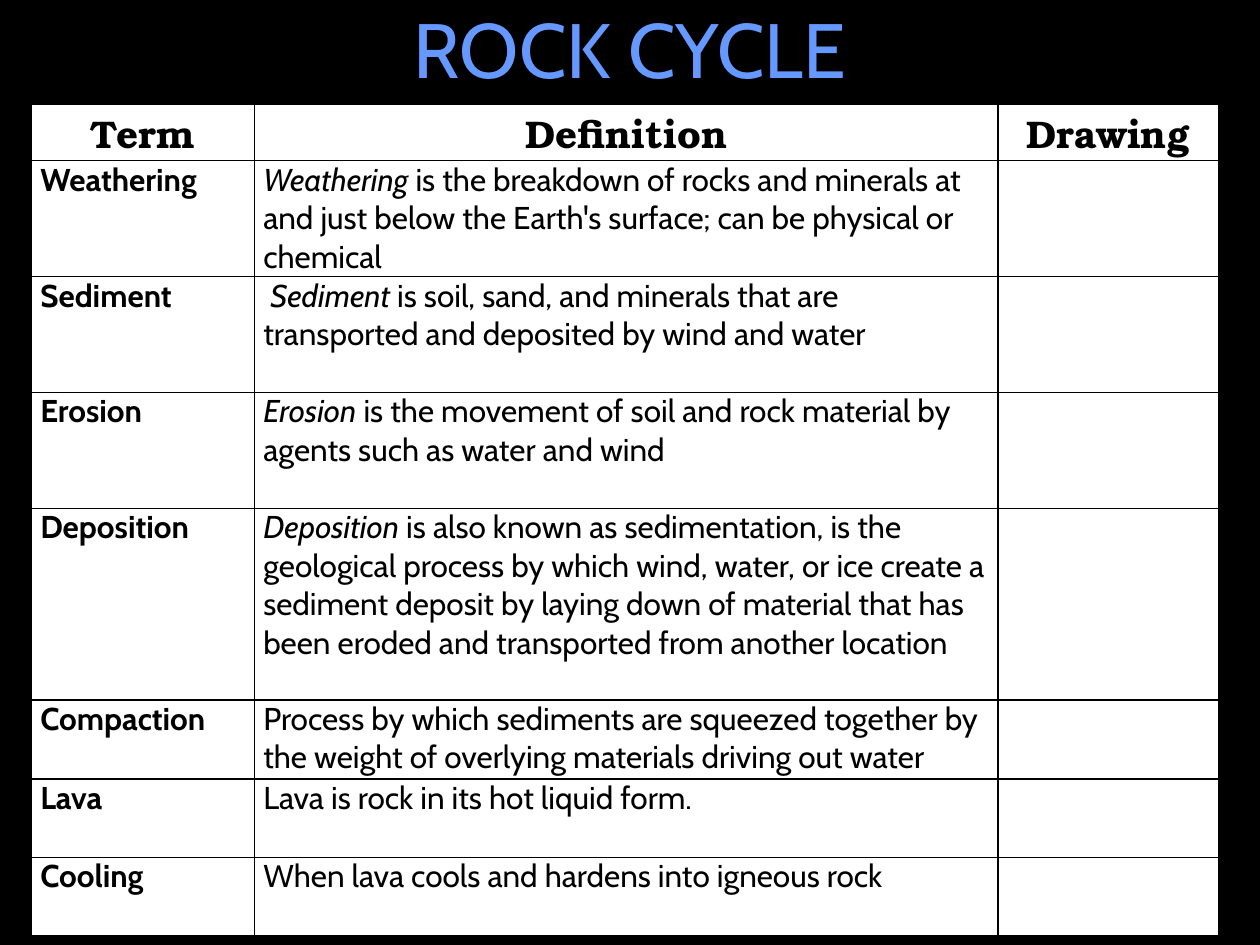
from pptx import Presentation
from pptx import util as u
from pptx.dml.color import RGBColor
from pptx.enum import text
from pptx.oxml import parse_xml
from pptx.oxml.ns import nsdecls

BLACK = RGBColor(0x00, 0x00, 0x00)
WHITE = RGBColor(0xFF, 0xFF, 0xFF)
BLUE = RGBColor(0x66, 0x99, 0xFF)

BODY_FONT = "Cabin"
HEADER_FONT = "TeX Gyre Bonum"

HEADERS = ("Term", "Definition", "Drawing")
COLUMN_WIDTHS = (1.77, 5.9, 1.75)
HEADER_HEIGHT = 0.44

# Term, italic opening of the definition, rest of the definition, row height
GLOSSARY = (
    ("Weathering", "Weathering",
     " is the breakdown of rocks and minerals at and just below the Earth's "
     "surface; can be physical or chemical", 0.92),
    ("Sediment", " Sediment",
     " is soil, sand, and minerals that are transported and deposited by "
     "wind and water", 0.92),
    ("Erosion", "Erosion",
     " is the movement of soil and rock material by agents such as water "
     "and wind", 0.92),
    ("Deposition", "Deposition",
     " is also known as sedimentation, is the geological process by which "
     "wind, water, or ice create a sediment deposit by laying down of "
     "material that has been eroded and transported from another location",
     1.52),
    ("Compaction", "",
     "Process by which sediments are squeezed together by the weight of "
     "overlying materials driving out water", 0.63),
    ("Lava", "", "Lava is rock in its hot liquid form.", 0.62),
    ("Cooling", "", "When lava cools and hardens into igneous rock", 0.62),
)


class SlideBuilder:
    """Holds the current slide and the style of its elements."""

    def __init__(self, slide):
        self.slide = slide
        slide.background.fill.solid()
        slide.background.fill.fore_color.rgb = BLACK

    def style(self, paragraph, size, color, font=BODY_FONT, bold=False,
              align=text.PP_ALIGN.LEFT):
        paragraph.alignment = align
        paragraph.font.name = font
        paragraph.font.size = u.Pt(size)
        paragraph.font.bold = bold
        paragraph.font.color.rgb = color

    def title(self, wording, left, top, width, height):
        heading = self.slide.shapes.title
        heading.left, heading.top = u.Inches(left), u.Inches(top)
        heading.width, heading.height = u.Inches(width), u.Inches(height)
        heading.text_frame.text = wording
        heading.text_frame.vertical_anchor = text.MSO_ANCHOR.MIDDLE
        self.style(heading.text_frame.paragraphs[0], 44, BLUE,
                   align=text.PP_ALIGN.CENTER)

    def table(self, left, top, widths, heights):
        grid = self.slide.shapes.add_table(
            len(heights), len(widths), u.Inches(left), u.Inches(top),
            u.Inches(sum(widths)), u.Inches(sum(heights))).table
        grid.first_row = grid.horz_banding = False
        for column, width in zip(grid.columns, widths):
            column.width = u.Inches(width)
        for row, height in zip(grid.rows, heights):
            row.height = u.Inches(height)
        for cell in grid.iter_cells():
            cell.margin_left = cell.margin_right = u.Inches(0.07)
            cell.margin_top = cell.margin_bottom = 0
            cell.fill.solid()
            cell.fill.fore_color.rgb = WHITE
            self.borders(cell)
        return grid

    def borders(self, cell):
        properties = cell._tc.get_or_add_tcPr()
        for position, side in enumerate(("lnL", "lnR", "lnT", "lnB")):
            properties.insert(position, parse_xml(
                f'<a:{side} {nsdecls("a")} w="{u.Pt(1)}"><a:solidFill>'
                f'<a:srgbClr val="{BLACK}"/></a:solidFill></a:{side}>'))

    def header(self, cell, wording):
        cell.text = wording
        self.style(cell.text_frame.paragraphs[0], 22, BLACK, HEADER_FONT,
                   True, text.PP_ALIGN.CENTER)

    def term(self, cell, wording):
        cell.text = wording
        self.style(cell.text_frame.paragraphs[0], 18, BLACK, bold=True)

    def definition(self, cell, opening, rest):
        paragraph = cell.text_frame.paragraphs[0]
        self.style(paragraph, 18, BLACK)
        if opening:
            opening_run = paragraph.add_run()
            opening_run.text = opening
            opening_run.font.italic = True
        paragraph.add_run().text = rest


def main():
    deck = Presentation()
    deck.slide_width, deck.slide_height = u.Inches(10), u.Inches(7.5)
    title_only = deck.slide_layouts[5]
    builder = SlideBuilder(deck.slides.add_slide(title_only))

    # Title
    builder.title("ROCK CYCLE", 0.5, -0.25, 9, 1.25)

    # Glossary table, with the drawing column left blank
    heights = [HEADER_HEIGHT] + [entry[-1] for entry in GLOSSARY]
    glossary = builder.table(0.25, 0.83, COLUMN_WIDTHS, heights)
    for column, heading in enumerate(HEADERS):
        builder.header(glossary.cell(0, column), heading)
    for row, (term, opening, rest, _) in enumerate(GLOSSARY, start=1):
        builder.term(glossary.cell(row, 0), term)
        builder.definition(glossary.cell(row, 1), opening, rest)

    deck.save("out.pptx")


if __name__ == "__main__":
    main()
